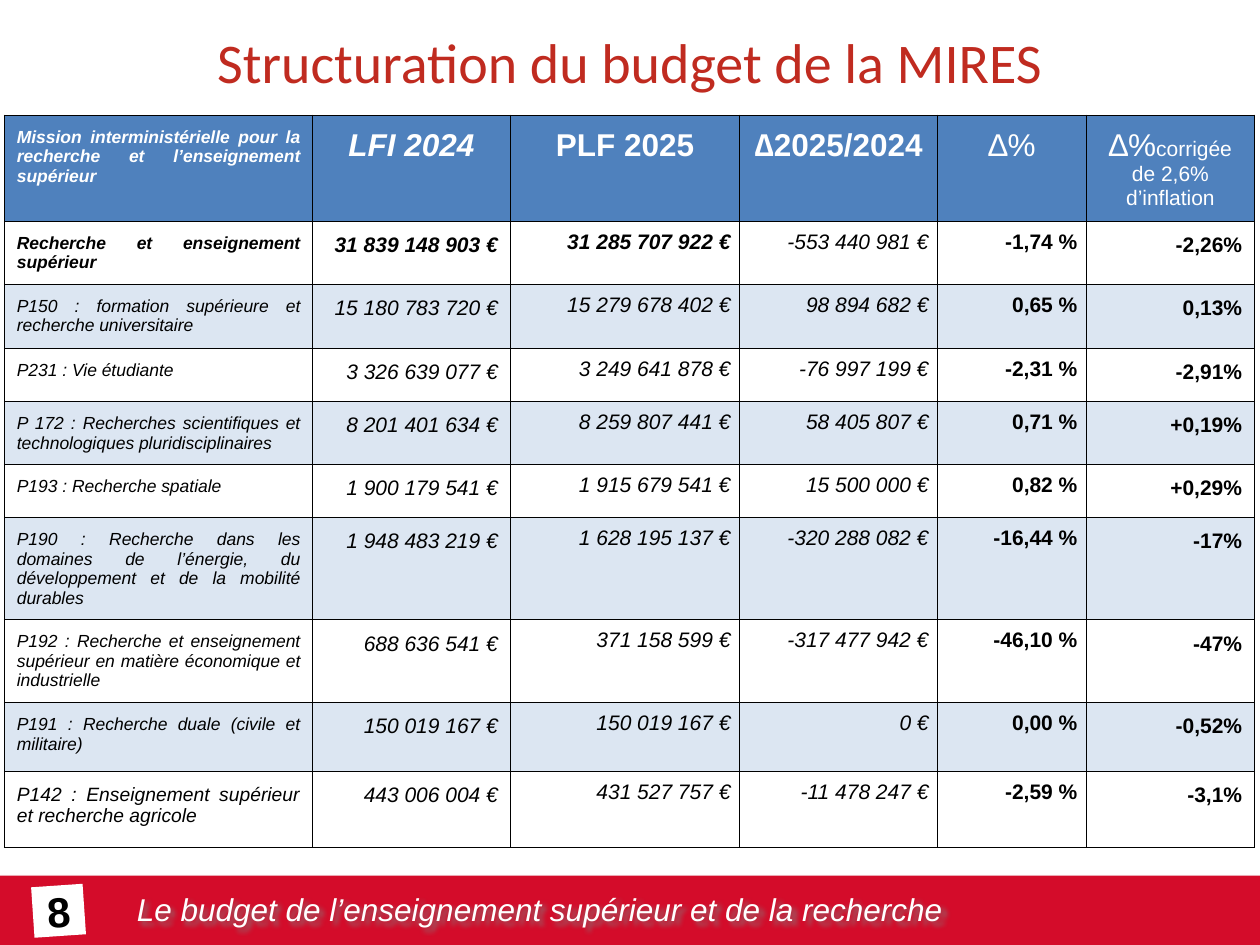
from lxml.etree import SubElement
from pptx import Presentation
from pptx.dml.color import RGBColor
from pptx.enum.shapes import MSO_SHAPE
from pptx.enum.text import MSO_ANCHOR, MSO_AUTO_SIZE, PP_ALIGN
from pptx.oxml.ns import qn
from pptx.util import Cm, Pt

RED, TITLE_RED, WHITE, BLACK, GREY = "D40C2A", "C02B20", "FFFFFF", "000000", "808080"
HEADER_BLUE, BAND_BLUE = "4F81BD", "DCE6F2"
COL_WIDTHS = [6.21, 3.99, 4.62, 3.99, 3.0, 3.39]
ROW_HEIGHTS = [2.14, 1.27, 1.29, 1.07, 1.27, 1.07, 2.06, 1.67, 1.39, 1.53]
WIDE, NARROW, BOTTOM = 0.25, 0.18, 0.1
INSETS = [WIDE, WIDE, NARROW, NARROW, NARROW, WIDE]
HEADERS = [
    ["Mission interministérielle pour la recherche et l’enseignement supérieur"],
    ["LFI 2024"],
    ["PLF 2025"],
    ["∆2025/2024"],
    ["∆%"],
    ["∆%", "corrigée de 2,6% d’inflation"],
]
ROWS = [
    ("Recherche et enseignement supérieur",
     "31 839 148 903 €", "31 285 707 922 €", "-553 440 981 €", "-1,74 %", "-2,26%"),
    ("P150 : formation supérieure et recherche universitaire",
     "15 180 783 720 €", "15 279 678 402 €", "98 894 682 €", "0,65 %", "0,13%"),
    ("P231 : Vie étudiante",
     "3 326 639 077 €", "3 249 641 878 €", "-76 997 199 €", "-2,31 %", "-2,91%"),
    ("P 172 : Recherches scientifiques et technologiques pluridisciplinaires",
     "8 201 401 634 €", "8 259 807 441 €", "58 405 807 €", "0,71 %", "+0,19%"),
    ("P193 : Recherche spatiale",
     "1 900 179 541 €", "1 915 679 541 €", "15 500 000 €", "0,82 %", "+0,29%"),
    ("P190 : Recherche dans les domaines de l’énergie, du développement et de la mobilité durables",
     "1 948 483 219 €", "1 628 195 137 €", "-320 288 082 €", "-16,44 %", "-17%"),
    ("P192 : Recherche et enseignement supérieur en matière économique et industrielle",
     "688 636 541 €", "371 158 599 €", "-317 477 942 €", "-46,10 %", "-47%"),
    ("P191 : Recherche duale (civile et militaire)",
     "150 019 167 €", "150 019 167 €", "0 €", "0,00 %", "-0,52%"),
    ("P142 : Enseignement supérieur et recherche agricole",
     "443 006 004 €", "431 527 757 €", "-11 478 247 €", "-2,59 %", "-3,1%"),
]


def rgb(color):
    """Turn a hex string into a colour."""
    return RGBColor.from_string(color)


def style_run(r, size, color, bold=False, italic=False, name="Arial"):
    """Format one run."""
    f = r.font
    f.size, f.bold, f.italic, f.name = Pt(size), bold, italic, name
    f.color.rgb = rgb(color)


def add_shadow(sp, color, alpha, blur, dist, angle):
    """Give a shape an outer shadow, with alpha in percent and angle in degrees."""
    sp.shadow.inherit = False
    effects = sp._element.spPr.find(qn("a:effectLst"))
    shadow = SubElement(effects, qn("a:outerShdw"), blurRad=str(Pt(blur)),
                        dist=str(Pt(dist)), dir=str(angle * 60000), rotWithShape="0")
    clr = SubElement(shadow, qn("a:srgbClr"), val=color)
    SubElement(clr, qn("a:alpha"), val=str(alpha * 1000))


def add_rect(s, left, top, width, height, color):
    """Draw a plain filled rectangle."""
    sp = s.shapes.add_shape(MSO_SHAPE.RECTANGLE, Cm(left), Cm(top), Cm(width), Cm(height))
    sp.fill.solid()
    sp.fill.fore_color.rgb = rgb(color)
    sp.line.fill.background()
    sp.shadow.inherit = False
    return sp


def set_borders(cell):
    """Draw thin black lines on all four sides of a cell."""
    tc_pr = cell._tc.get_or_add_tcPr()
    for side in ("lnL", "lnR", "lnT", "lnB"):
        ln = SubElement(tc_pr, qn(f"a:{side}"), w=str(Pt(0.75)))
        fill = SubElement(ln, qn("a:solidFill"))
        SubElement(fill, qn("a:srgbClr"), val=BLACK)


def fill_cell(cell, texts, sizes, align, inset, fill, color, bold, italic):
    """Write and format one table cell."""
    set_borders(cell)
    if fill:
        cell.fill.solid()
        cell.fill.fore_color.rgb = rgb(fill)
    else:
        cell.fill.background()
    cell.margin_left = cell.margin_right = cell.margin_top = Cm(inset)
    cell.margin_bottom = Cm(BOTTOM)
    cell.vertical_anchor = MSO_ANCHOR.TOP
    p = cell.text_frame.paragraphs[0]
    p.alignment = align
    for text, size in zip(texts, sizes):
        r = p.add_run()
        r.text = text
        style_run(r, size, color, bold, italic)


def add_title(s, left, top, width, height):
    """Place the slide title."""
    sp = s.shapes.title
    sp.left, sp.top, sp.width, sp.height = Cm(left), Cm(top), Cm(width), Cm(height)
    tf = sp.text_frame
    tf.text = "Structuration du budget de la MIRES"
    tf.auto_size = MSO_AUTO_SIZE.NONE
    tf.vertical_anchor = MSO_ANCHOR.MIDDLE
    p = tf.paragraphs[0]
    p.alignment = PP_ALIGN.CENTER
    style_run(p.runs[0], 32, TITLE_RED, name="Calibri")


def add_budget_table(s, left, top):
    """Place the budget table with its header and programme rows."""
    frame = s.shapes.add_table(len(ROW_HEIGHTS), len(COL_WIDTHS), Cm(left), Cm(top),
                               Cm(sum(COL_WIDTHS)), Cm(sum(ROW_HEIGHTS)))
    table = frame.table
    for column, width in zip(table.columns, COL_WIDTHS):
        column.width = Cm(width)
    for row, height in zip(table.rows, ROW_HEIGHTS):
        row.height = Cm(height)
    for j, texts in enumerate(HEADERS):
        sizes = [18, 12] if j else [10]
        align = PP_ALIGN.CENTER if j else PP_ALIGN.JUSTIFY
        fill_cell(table.cell(0, j), texts, sizes, align, WIDE, HEADER_BLUE, WHITE,
                  bold=j < 4, italic=j < 2)
    for i, values in enumerate(ROWS, start=1):
        fill = None if i % 2 else BAND_BLUE
        label_size = 11 if i == len(ROWS) else 10
        for j, value in enumerate(values):
            align = PP_ALIGN.RIGHT if j else PP_ALIGN.JUSTIFY
            fill_cell(table.cell(i, j), [value], [12 if j else label_size], align,
                      INSETS[j], fill, BLACK, bold=j > 3 or (i == 1 and j < 3), italic=j < 4)


def add_footer(s, left, top, width, height):
    """Place the footer band with its caption and the page number."""
    band = add_rect(s, left, top, width, height, RED)
    add_shadow(band, GREY, 35, 3.1, 1.8, 90)

    caption = s.shapes.add_textbox(Cm(left + 2.51), Cm(top + 0.16), Cm(18.5), Cm(1.02))
    tf = caption.text_frame
    tf.word_wrap = True
    tf.text = "Le budget de l’enseignement supérieur et de la recherche"
    style_run(tf.paragraphs[0].runs[0], 18, WHITE, italic=True)
    add_shadow(caption, GREY, 80, 3, 3, 45)

    badge = add_rect(s, left + 0.66, top + 0.2, 1.04, 1.02, WHITE)
    badge.rotation = 356.1
    tf = badge.text_frame
    tf.margin_left = tf.margin_right = tf.margin_top = tf.margin_bottom = 0
    tf.word_wrap = False
    tf.vertical_anchor = MSO_ANCHOR.MIDDLE
    tf.text = "8"
    p = tf.paragraphs[0]
    p.alignment = PP_ALIGN.CENTER
    style_run(p.runs[0], 24, BLACK, bold=True)


def main():
    """Build the budget slide."""
    prs = Presentation()
    prs.slide_width, prs.slide_height = Cm(25.4), Cm(19.05)
    s = prs.slides.add_slide(prs.slide_layouts[5])
    add_footer(s, 0, 17.65, 25.4, 1.4)
    add_title(s, 0, 0, 25.4, 2.48)
    add_budget_table(s, 0.09, 2.32)
    prs.save("out.pptx")


if __name__ == "__main__":
    main()
